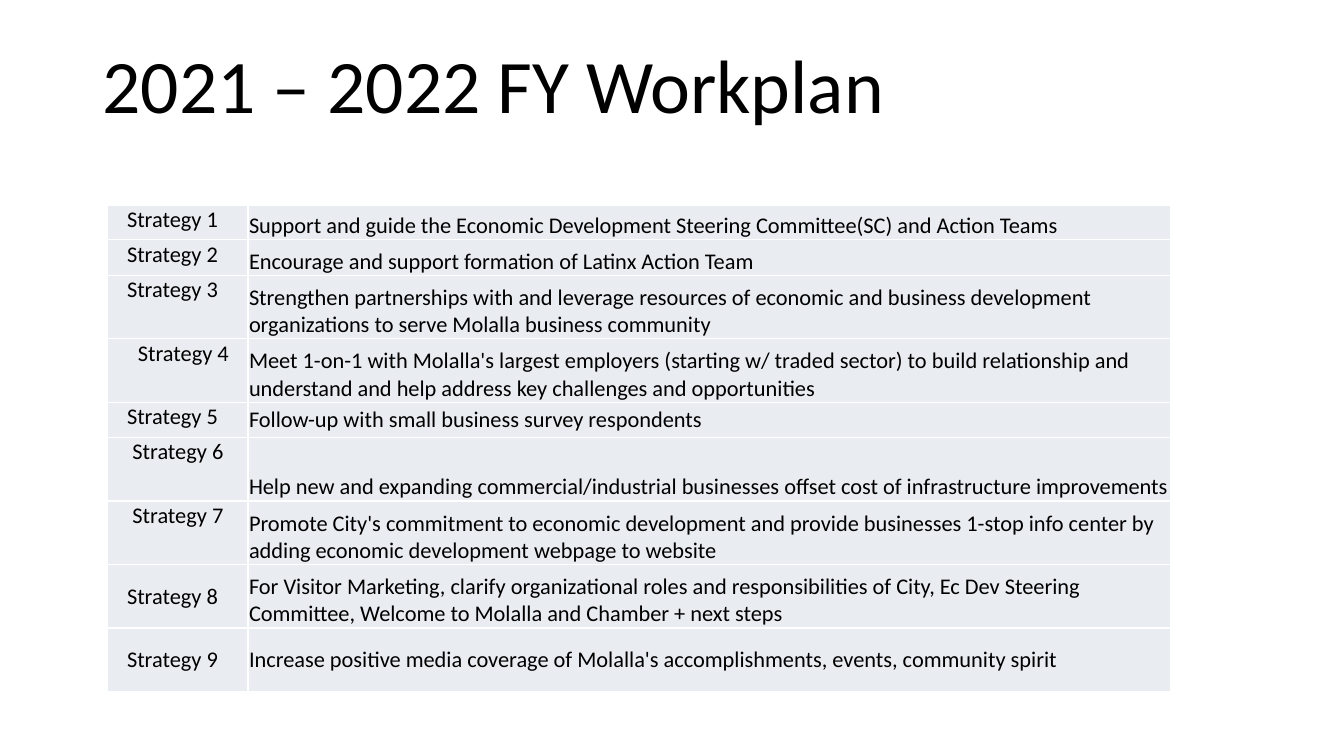
from lxml import etree
from pptx import Presentation
from pptx.dml.color import RGBColor
from pptx.enum import text as t
from pptx.oxml.ns import qn
from pptx.util import Inches, Pt

TITLE = "2021 – 2022 FY Workplan"
TOP, MID, LOW = t.MSO_ANCHOR.TOP, t.MSO_ANCHOR.MIDDLE, t.MSO_ANCHOR.BOTTOM
LEFT, MIDDLE, RIGHT = t.PP_ALIGN.LEFT, t.PP_ALIGN.CENTER, t.PP_ALIGN.RIGHT
# height, label alignment, label anchor, goal anchor, goal
ROWS = [
    (0.34, LEFT, TOP, LOW, "Support and guide the Economic Development Steering Committee(SC) and Action Teams"),
    (0.35, LEFT, TOP, LOW, "Encourage and support formation of Latinx Action Team"),
    (0.63, LEFT, TOP, LOW, "Strengthen partnerships with and leverage resources of economic and business "
     "development organizations to serve Molalla business community"),
    (0.63, RIGHT, TOP, LOW, "Meet 1-on-1 with Molalla's largest employers (starting w/ traded sector) to build "
     "relationship and understand and help address key challenges and opportunities"),
    (0.35, LEFT, TOP, MID, "Follow-up with small business survey respondents"),
    (0.63, MIDDLE, TOP, LOW, "Help new and expanding commercial/industrial businesses offset cost of "
     "infrastructure improvements"),
    (0.63, MIDDLE, TOP, LOW, "Promote City's commitment to economic development and provide businesses 1-stop "
     "info center by adding economic development webpage to website"),
    (0.63, LEFT, MID, LOW, "For Visitor Marketing, clarify organizational roles and responsibilities of City, "
     "Ec Dev Steering Committee, Welcome to Molalla and Chamber + next steps"),
    (0.63, LEFT, MID, MID, "Increase positive media coverage of Molalla's accomplishments, events, community spirit"),
]
COLS = [1.39, 9.15]
PAD, INDENT = 0.01, 0.19
BLACK, WHITE, PALE = "000000", "FFFFFF", "E9EDF2"


def color(code):
    return RGBColor.from_string(code)


def style(para, size):
    for run in para.runs:
        run.font.name = "Calibri"
        run.font.size = Pt(size)
        run.font.color.rgb = color(BLACK)


def border(cell):
    """Put a thin white line on each side of the cell."""
    props = cell._tc.get_or_add_tcPr()
    for spot, side in enumerate(("lnL", "lnR", "lnT", "lnB")):
        line = etree.Element(qn("a:" + side), w=str(Pt(1)))
        fill = etree.SubElement(line, qn("a:solidFill"))
        etree.SubElement(fill, qn("a:srgbClr"), val=WHITE)
        props.insert(spot, line)


def fill_cell(cell, words, align, anchor, indent):
    cell.text_frame.text = words
    para = cell.text_frame.paragraphs[0]
    para.alignment = align
    style(para, 16)
    cell.vertical_anchor = anchor
    cell.margin_left = Inches(indent if align == LEFT else PAD)
    cell.margin_right = Inches(indent if align == RIGHT else PAD)
    cell.margin_top, cell.margin_bottom = Inches(PAD), 0
    cell.fill.solid()
    cell.fill.fore_color.rgb = color(PALE)
    border(cell)


def add_title(slide):
    box = slide.shapes.add_textbox(Inches(0.92), Inches(0.32), Inches(11.5), Inches(1.02))
    frame = box.text_frame
    frame.word_wrap = True
    frame.vertical_anchor = LOW
    frame.text = TITLE
    frame.paragraphs[0].line_spacing = 0.9
    style(frame.paragraphs[0], 54)


def add_plan(slide):
    high = sum(row[0] for row in ROWS)
    table = slide.shapes.add_table(len(ROWS), len(COLS), Inches(1.07), Inches(2.04),
                                   Inches(sum(COLS)), Inches(high)).table
    for col, width in zip(table.columns, COLS):
        col.width = Inches(width)
    for i, (height, align, anchor, rest, goal) in enumerate(ROWS):
        table.rows[i].height = Inches(height)
        fill_cell(table.cell(i, 0), f"Strategy {i + 1}", align, anchor, INDENT)
        fill_cell(table.cell(i, 1), goal, LEFT, rest, PAD)


def main():
    deck = Presentation()
    deck.slide_width, deck.slide_height = Inches(13.33), Inches(7.5)
    slide = deck.slides.add_slide(deck.slide_layouts[6])
    add_title(slide)
    add_plan(slide)
    deck.save("out.pptx")


if __name__ == "__main__":
    main()
